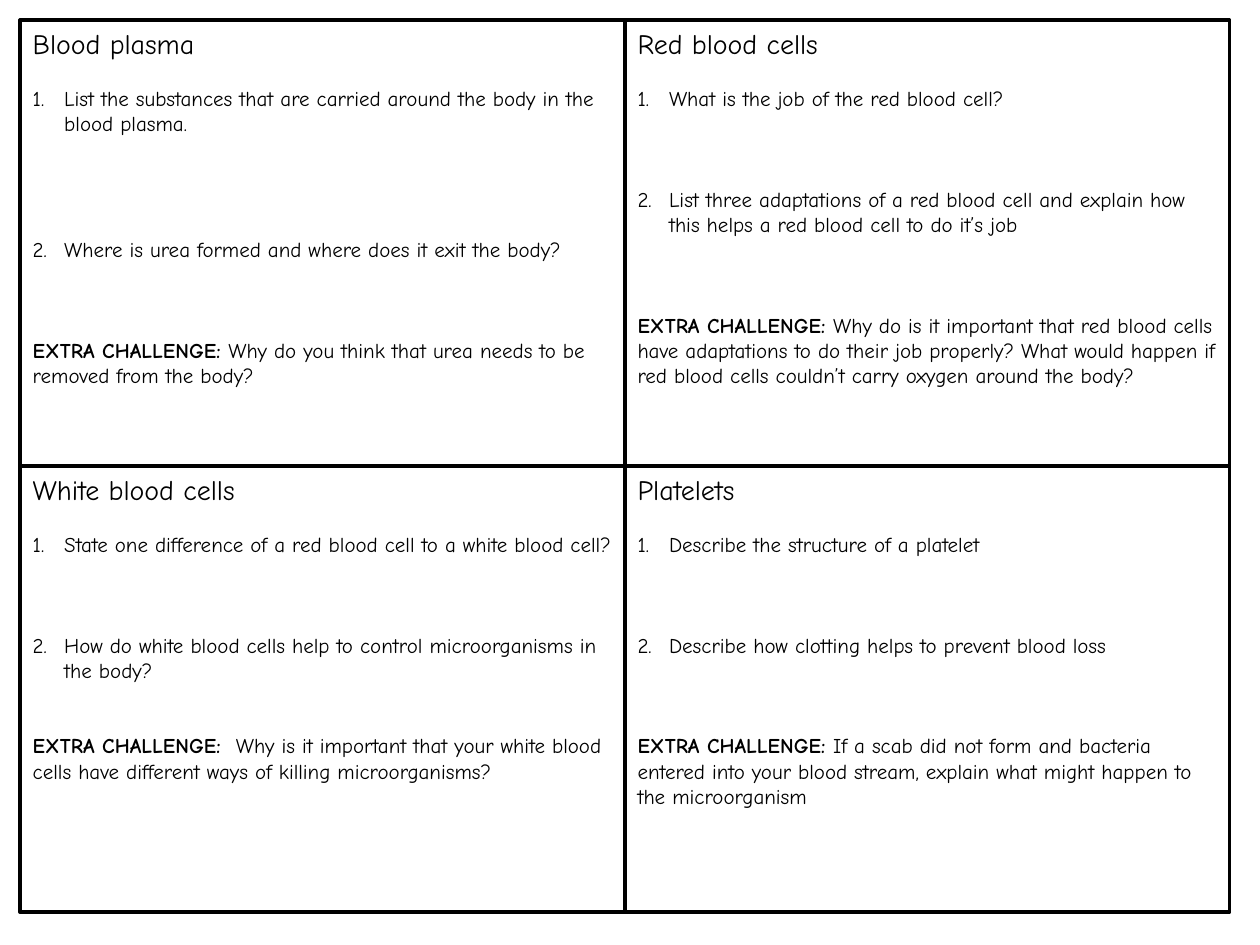
from lxml.etree import SubElement
from pptx import Presentation
from pptx.dml.color import RGBColor
from pptx.enum.shapes import MSO_SHAPE
from pptx.enum.text import MSO_ANCHOR, MSO_AUTO_SIZE, PP_ALIGN
from pptx.oxml.ns import qn
from pptx.util import Inches, Pt

FONT, INK = "Comic Neue", "000000"
LINE = 14.4  # height of one 12 pt line, in points
COLS, ROWS = 2, 2
LEFT, TOP, CELL_W, CELL_H = 0.16, 0.16, 4.8, 3.54

# heading, questions with blank answer lines below each, extra challenge
CARDS = [
    ("Blood plasma",
     [("List the substances that are carried around the body in the blood plasma.", 4),
      ("Where is urea formed and where does it exit the body?", 3)],
     ("EXTRA CHALLENGE: ",
      "Why do you think that urea needs to be removed from the body?")),
    ("Red blood cells",
     [("What is the job of the red blood cell?", 3),
      ("List three adaptations of a red blood cell and explain how this helps "
       "a red blood cell to do it’s job", 3)],
     ("EXTRA CHALLENGE: ",
      "Why do is it important that red blood cells have adaptations to do their job "
      "properly? What would happen if red blood cells couldn’t carry oxygen around "
      "the body?")),
    ("White blood cells",
     [("State one difference of a red blood cell to a white blood cell?", 3),
      ("How do white blood cells help to control microorganisms in the body?", 2)],
     ("EXTRA CHALLENGE:  ",
      "Why is it important that your white blood cells have different ways of killing "
      "microorganisms?")),
    ("Platelets",
     [("Describe the structure of a platelet", 3),
      ("Describe how clotting helps to prevent blood loss", 3)],
     ("EXTRA CHALLENGE: ",
      "If a scab did not form and bacteria entered into your blood stream, explain "
      "what might happen to the microorganism")),
]


def color(value):
    return RGBColor.from_string(value)


def set_all(obj, values):
    for name, value in values.items():
        setattr(obj, name, value)


def add_run(p, text, size=12, bold=False):
    r = p.add_run()
    r.text = text
    set_all(r.font, {"name": FONT, "size": Pt(size), "bold": bold})
    r.font.color.rgb = color(INK)


def format_paragraph(p, blank_lines=0, numbered=False):
    """Set the gap above and either a hanging number or no bullet."""
    pPr = p._p.get_or_add_pPr()
    indent = Inches(0.25) if numbered else 0
    pPr.set("marL", str(indent))
    pPr.set("indent", str(-indent))
    if numbered:
        SubElement(pPr, qn("a:buFont"), typeface="+mj-lt")
        SubElement(pPr, qn("a:buAutoNum"), type="arabicPeriod")
    else:
        SubElement(pPr, qn("a:buNone"))
    set_all(p, {"alignment": PP_ALIGN.LEFT, "line_spacing": 1.0,
                "space_before": Pt(blank_lines * LINE), "space_after": Pt(0)})


def add_frame(slide, box):
    sp = slide.shapes.add_shape(MSO_SHAPE.RECTANGLE, *box)
    sp.shadow.inherit = False
    sp.fill.background()
    sp.line.color.rgb = color(INK)
    sp.line.width = Pt(2)


def fill_card(body, box, heading, questions, challenge):
    set_all(body, dict(zip(("left", "top", "width", "height"), box)))
    tf = body.text_frame
    set_all(tf, {"word_wrap": True, "auto_size": MSO_AUTO_SIZE.NONE,
                 "vertical_anchor": MSO_ANCHOR.TOP,
                 "margin_left": Inches(0.1), "margin_right": Inches(0.1),
                 "margin_top": Inches(0.05), "margin_bottom": Inches(0.05)})
    p = tf.paragraphs[0]
    format_paragraph(p)
    add_run(p, heading, size=16)
    gap = 1
    for question, answer_lines in questions:
        p = tf.add_paragraph()
        format_paragraph(p, gap, numbered=True)
        add_run(p, question)
        gap = answer_lines
    p = tf.add_paragraph()
    format_paragraph(p, gap)
    label, text = challenge
    add_run(p, label, bold=True)
    add_run(p, text)


def build_cards(slide):
    bodies = [s for s in slide.placeholders if 1 <= s.placeholder_format.idx <= COLS * ROWS]
    for i, (body, card) in enumerate(zip(bodies, CARDS)):
        row, col = divmod(i, COLS)
        box = [Inches(v) for v in (LEFT + col * CELL_W, TOP + row * CELL_H, CELL_W, CELL_H)]
        add_frame(slide, box)
        fill_card(body, box, *card)


def main():
    prs = Presentation()
    prs.slide_width, prs.slide_height = Inches(10), Inches(7.5)
    slide = prs.slides.add_slide(prs.slide_layouts.get_by_name("Comparison"))
    title = slide.shapes.title
    title.element.getparent().remove(title.element)
    build_cards(slide)
    prs.save("out.pptx")


if __name__ == "__main__":
    main()
